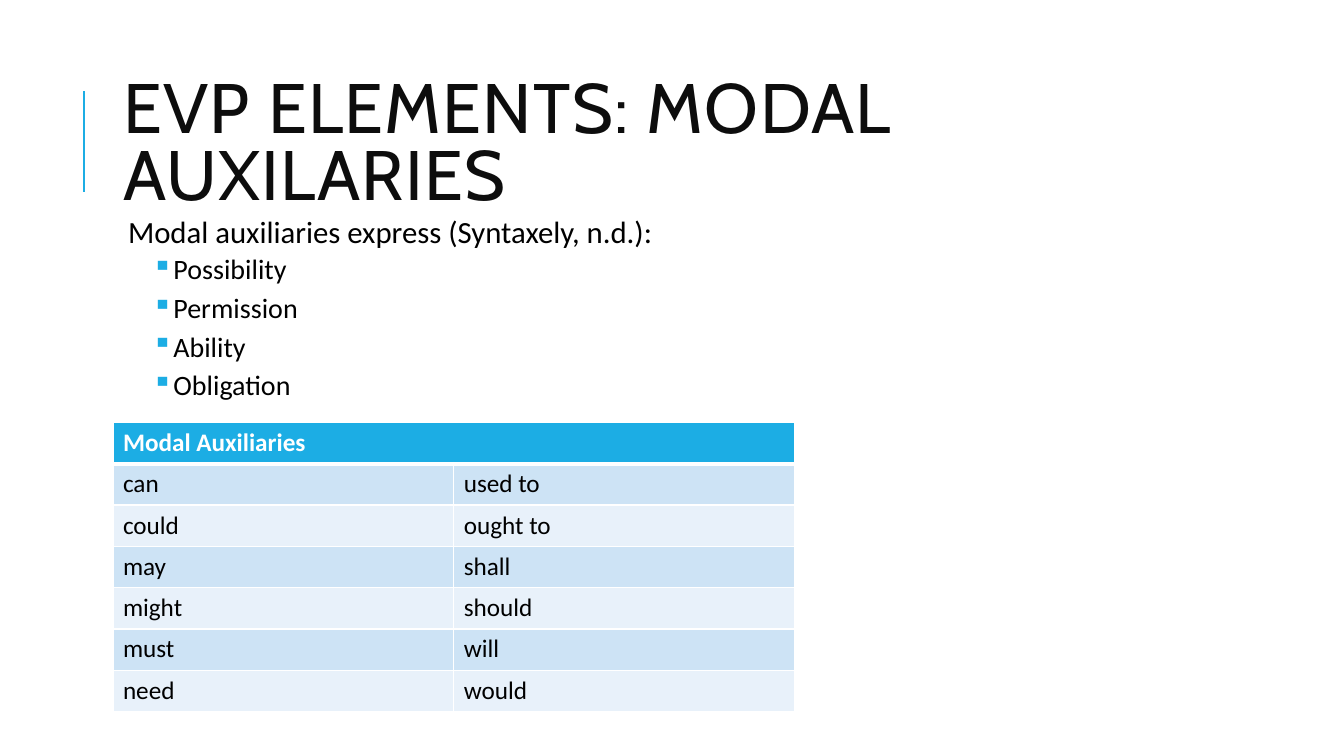
from pptx import Presentation
from pptx.dml.color import RGBColor
from pptx.enum.shapes import MSO_CONNECTOR
from pptx.enum.text import MSO_ANCHOR, MSO_AUTO_SIZE, PP_ALIGN
from pptx.oxml import parse_xml
from pptx.oxml.ns import nsdecls, qn
from pptx.oxml.xmlchemy import OxmlElement
from pptx.util import Inches, Pt

ACCENT = RGBColor(0x1C, 0xAD, 0xE4)
INK = RGBColor(0x0D, 0x0D, 0x0D)
BLACK = RGBColor(0, 0, 0)
WHITE = RGBColor(0xFF, 0xFF, 0xFF)
BANDS = (RGBColor(0xCD, 0xE3, 0xF5), RGBColor(0xE8, 0xF1, 0xFA))

# Content column shared by title, text and table
LEFT, WIDTH = Inches(1.12), Inches(10.63)
COL_W, ROW_H = Inches(3.38), Inches(0.41)

MEANINGS = ("Possibility", "Permission", "Ability", "Obligation")
MODALS = (
    ("can", "used to"),
    ("could", "ought to"),
    ("may", "shall"),
    ("might", "should"),
    ("must", "will"),
    ("need", "would"),
)


def set_attrs(obj, **values):
    for name, value in values.items():
        setattr(obj, name, value)


def write(p, text, size, color=BLACK, font="Calibri", bold=False):
    r = p.add_run()
    r.text = text
    set_attrs(r.font, name=font, size=Pt(size), bold=bold)
    r.font.color.rgb = color
    return r


def add_title(s, text):
    title = s.shapes.title
    set_attrs(title, left=LEFT, top=Inches(0.64), width=WIDTH, height=Inches(1.64))
    tf = title.text_frame
    set_attrs(tf, word_wrap=True, auto_size=MSO_AUTO_SIZE.NONE,
              vertical_anchor=MSO_ANCHOR.MIDDLE)
    p = tf.paragraphs[0]
    set_attrs(p, alignment=PP_ALIGN.LEFT, line_spacing=0.8)
    r = write(p, text, 50, INK, "Cabin")
    r.font._element.set("spc", "100")


def add_rule(s, x, top, bottom):
    line = s.shapes.add_connector(MSO_CONNECTOR.STRAIGHT, x, bottom, x, top)
    line.line.color.rgb = ACCENT
    line.line.width = Pt(1.5)
    line._element.spPr.append(OxmlElement("a:effectLst"))


def indent(p, margin, first=0, bullet=None):
    pPr = p._p.get_or_add_pPr()
    pPr.set("marL", str(Inches(margin)))
    pPr.set("indent", str(Inches(first)))
    if bullet:
        pPr.append(parse_xml(
            f'<a:buClr {nsdecls("a")}><a:srgbClr val="{ACCENT}"/></a:buClr>'))
        pPr.append(parse_xml(f'<a:buChar {nsdecls("a")} char="{bullet}"/>'))


def add_bullets(s, lead, items):
    tf = s.shapes.add_textbox(LEFT, Inches(2.1), WIDTH, Inches(4.8)).text_frame
    inset = Inches(0.05)
    set_attrs(tf, word_wrap=True, margin_left=inset, margin_top=inset,
              margin_right=inset, margin_bottom=inset)
    p = tf.paragraphs[0]
    set_attrs(p, line_spacing=0.9, space_after=Pt(2))
    indent(p, 0.1)
    write(p, lead, 22)
    for item in items:
        p = tf.add_paragraph()
        set_attrs(p, line_spacing=0.9, space_before=Pt(2), space_after=Pt(4))
        indent(p, 0.55, -0.21, "▪")
        write(p, item, 20)


def add_borders(cell, **widths):
    tcPr = cell._tc.get_or_add_tcPr()
    fill = tcPr.find(qn("a:solidFill"))
    for side in ("L", "R", "T", "B"):
        width = Pt(widths.get(side, 1))
        fill.addprevious(parse_xml(
            f'<a:ln{side} {nsdecls("a")} w="{width}"><a:solidFill>'
            f'<a:srgbClr val="{WHITE}"/></a:solidFill></a:ln{side}>'))


def fill_cell(cell, text, fill, color=BLACK, bold=False, **borders):
    cell.fill.solid()
    cell.fill.fore_color.rgb = fill
    if text:
        write(cell.text_frame.paragraphs[0], text, 18, color, bold=bold)
    add_borders(cell, **borders)


def add_word_table(s, heading, rows):
    n_rows, n_cols = len(rows) + 1, len(rows[0])
    table = s.shapes.add_table(n_rows, n_cols, LEFT, Inches(4.19),
                               n_cols * COL_W, n_rows * ROW_H).table
    table.horz_banding = False
    # Header across all columns
    for col, text in enumerate((heading, "")):
        fill_cell(table.cell(0, col), text, ACCENT, WHITE, True, B=3)
    table.cell(0, 0).merge(table.cell(0, n_cols - 1))
    # Banded word rows
    for i, words in enumerate(rows):
        for col, word in enumerate(words):
            fill_cell(table.cell(i + 1, col), word, BANDS[i % 2],
                      T=3 if i == 0 else 1)


def main():
    prs = Presentation()
    set_attrs(prs, slide_width=Inches(13.33), slide_height=Inches(7.5))
    s = prs.slides.add_slide(prs.slide_layouts[5])
    add_rule(s, Inches(0.83), Inches(0.9), Inches(1.9))
    add_title(s, "EVP ELEMENTS: MODAL AUXILARIES")
    add_bullets(s, "Modal auxiliaries express (Syntaxely, n.d.):", MEANINGS)
    add_word_table(s, "Modal Auxiliaries", MODALS)
    prs.save("out.pptx")


if __name__ == "__main__":
    main()
